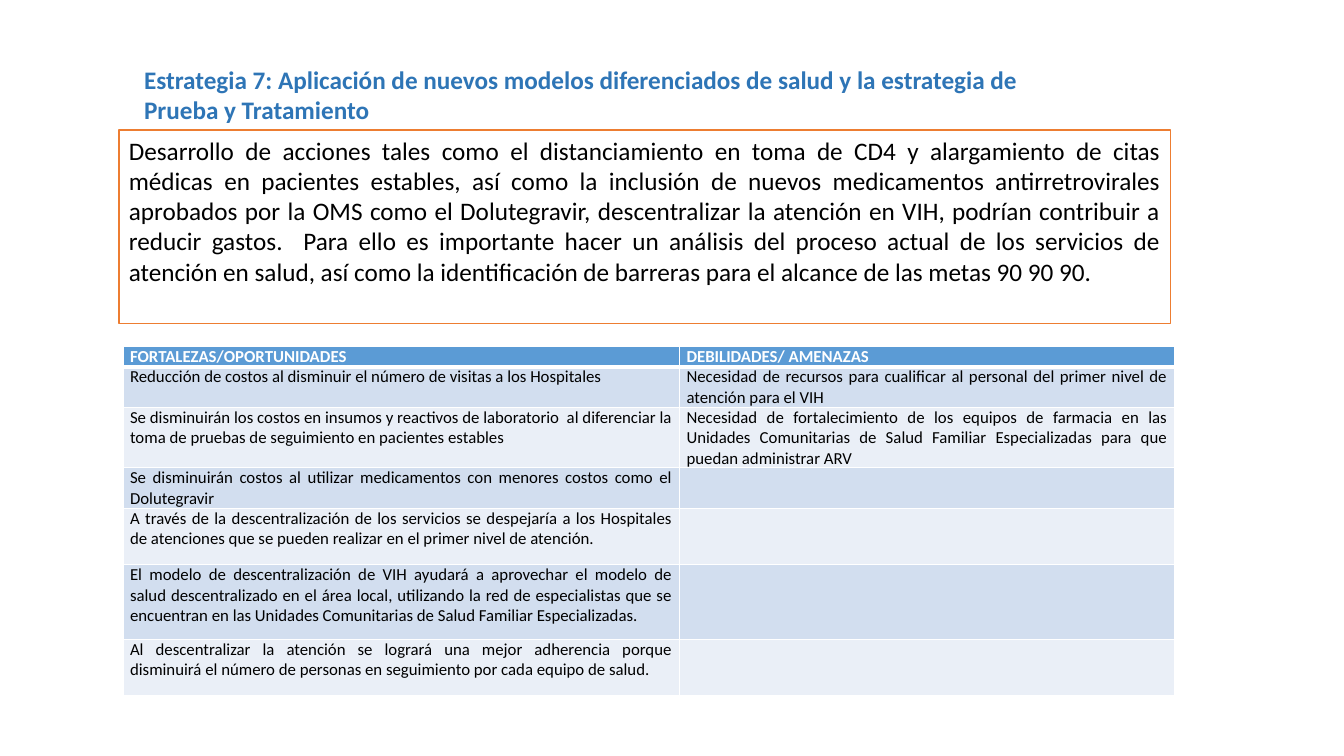
from lxml.etree import SubElement
from pptx import Presentation
from pptx.dml.color import RGBColor
from pptx.enum.shapes import MSO_SHAPE as SHAPE
from pptx.enum.text import MSO_ANCHOR as ANCHOR, PP_ALIGN as ALIGN
from pptx.oxml.ns import qn
from pptx.util import Inches, Pt

COLORS = {
    "title": "2E75B6", "text": "000000", "white": "FFFFFF", "frame": "ED7D31",
    "header": "5B9BD5", "band_dark": "D2DEEF", "band_light": "EAEFF7",
}
TITLE = ("Estrategia 7: Aplicación de nuevos modelos diferenciados de salud "
         "y la estrategia de Prueba y Tratamiento")
SUMMARY = (
    "Desarrollo de acciones tales como el distanciamiento en toma de CD4 y "
    "alargamiento de citas médicas en pacientes estables, así como la inclusión "
    "de nuevos medicamentos antirretrovirales aprobados por la OMS como el "
    "Dolutegravir, descentralizar la atención en VIH, podrían contribuir a "
    "reducir gastos.  Para ello es importante hacer un análisis del proceso "
    "actual de los servicios de atención en salud, así como la identificación "
    "de barreras para el alcance de las metas 90 90 90. ")
# Row height in inches, then the two cells
ROWS = [
    (0.19, "FORTALEZAS/OPORTUNIDADES", "DEBILIDADES/ AMENAZAS"),
    (0.37, "Reducción de costos al disminuir el número de visitas a los Hospitales",
     "Necesidad de recursos para cualificar al personal del primer nivel de "
     "atención para el VIH"),
    (0.56, "Se disminuirán los costos en insumos y reactivos de laboratorio  al "
     "diferenciar la toma de pruebas de seguimiento en pacientes estables",
     "Necesidad de fortalecimiento de los equipos de farmacia en las Unidades "
     "Comunitarias de Salud Familiar Especializadas para que puedan administrar ARV"),
    (0.37, "Se disminuirán costos al utilizar medicamentos con menores costos "
     "como el Dolutegravir", ""),
    (0.56, "A través de la descentralización de los servicios se despejaría a los "
     "Hospitales de atenciones que se pueden realizar en el primer nivel de "
     "atención. ", ""),
    (0.74, "El modelo de descentralización de VIH ayudará a aprovechar el modelo "
     "de salud descentralizado en el área local, utilizando la red de "
     "especialistas que se encuentran en las Unidades Comunitarias de Salud "
     "Familiar Especializadas.", ""),
    (0.56, "Al descentralizar la atención se logrará una mejor adherencia porque "
     "disminuirá el número de personas en seguimiento por cada equipo de salud.", ""),
]


def rgb(name):
    return RGBColor.from_string(COLORS[name])


def write(tf, text, size=18, color="text", bold=False, align=ALIGN.JUSTIFY):
    tf.word_wrap = True
    p = tf.paragraphs[0]
    p.alignment = align
    if not text:
        return
    r = p.add_run()
    r.text = text
    r.font.name, r.font.size, r.font.bold = "Calibri", Pt(size), bold
    r.font.color.rgb = rgb(color)


def set_borders(cell, bottom=1):
    """White cell borders; widths in points, placed before the cell fill."""
    tc_pr = cell._tc.get_or_add_tcPr()
    for side in ("L", "R", "T", "B"):
        width = bottom if side == "B" else 1
        ln = SubElement(tc_pr, qn(f"a:ln{side}"), w=str(Pt(width)))
        fill = SubElement(ln, qn("a:solidFill"))
        SubElement(fill, qn("a:srgbClr"), val=COLORS["white"])


def add_title(s, *box):
    tf = s.shapes.add_textbox(*map(Inches, box)).text_frame
    write(tf, TITLE, color="title", bold=True, align=ALIGN.LEFT)


def add_summary(s, *box):
    sp = s.shapes.add_shape(SHAPE.RECTANGLE, *map(Inches, box))
    sp.shadow.inherit = False
    sp.fill.solid()
    sp.fill.fore_color.rgb = rgb("white")
    sp.line.color.rgb = rgb("frame")
    sp.line.width = Pt(1)
    sp.text_frame.vertical_anchor = ANCHOR.TOP
    write(sp.text_frame, SUMMARY)


def add_swot_table(s, left, top, widths):
    box = (left, top, sum(widths), sum(row[0] for row in ROWS))
    table = s.shapes.add_table(len(ROWS), len(widths), *map(Inches, box)).table
    for col, width in zip(table.columns, widths):
        col.width = Inches(width)
    for i, (height, *texts) in enumerate(ROWS):
        table.rows[i].height = Inches(height)
        header = i == 0
        band = "header" if header else "band_dark" if i % 2 else "band_light"
        for j, text in enumerate(texts):
            cell = table.cell(i, j)
            cell.margin_left = cell.margin_right = Inches(0.07)
            cell.margin_top = cell.margin_bottom = 0
            set_borders(cell, bottom=3 if header else 1)
            cell.fill.solid()
            cell.fill.fore_color.rgb = rgb(band)
            write(cell.text_frame, text, size=12, bold=header,
                  color="white" if header else "text")


def main():
    prs = Presentation()
    prs.slide_width, prs.slide_height = Inches(13.33), Inches(7.5)
    s = prs.slides.add_slide(prs.slide_layouts[6])
    add_title(s, 1.33, 0.59, 9.65, 0.71)
    add_summary(s, 1.18, 1.29, 10.43, 1.92)
    add_swot_table(s, 1.22, 3.44, (5.52, 4.91))
    prs.save("out.pptx")


if __name__ == "__main__":
    main()
